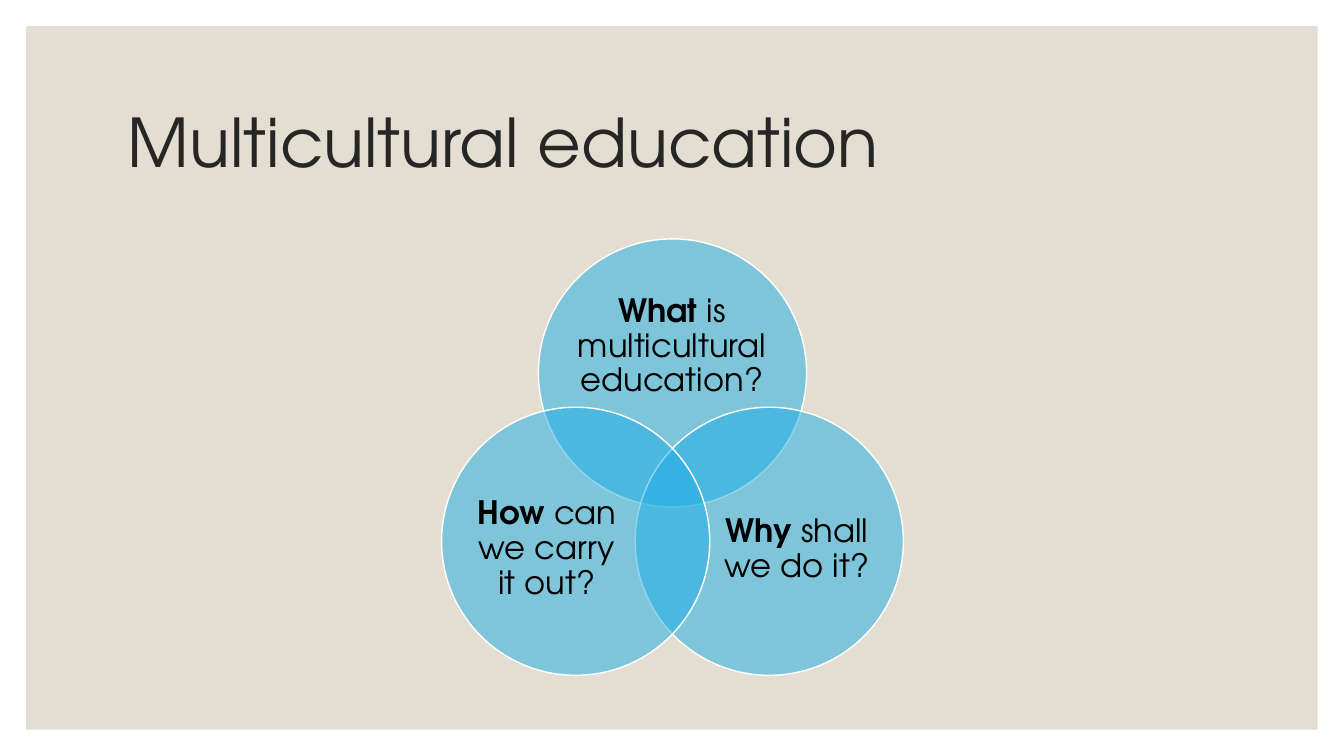
"""Build the multicultural education slide with its three-circle Venn diagram."""
from lxml import etree
from pptx import Presentation, util as u
from pptx.dml.color import RGBColor
from pptx.enum import shapes, text
from pptx.oxml import ns

HEADING = "Multicultural education"
QUESTIONS = [
    {"lead": "What ", "rest": "is multicultural education?",
     "circle": (5.34, 2.37), "label": (5.69, 2.84, 1.95, 1.2)},
    {"lead": "Why ", "rest": "shall we do it?",
     "circle": (6.3, 4.04), "label": (7.11, 4.72, 1.59, 1.46)},
    {"lead": "How ", "rest": "can we carry it out?",
     "circle": (4.38, 4.04), "label": (4.63, 4.72, 1.59, 1.46)},
]

WIDTH, HEIGHT, MARGIN = 13.33, 7.5, 0.26
DIAMETER = 2.66
FONT = "TeX Gyre Adventor"
SAND = RGBColor(0xE3, 0xDE, 0xD1)
BLUE = RGBColor(0x1C, 0xAD, 0xE4)
WHITE = RGBColor(0xFF, 0xFF, 0xFF)
BLACK = RGBColor(0, 0, 0)
CHARCOAL = RGBColor(0x26, 0x26, 0x26)

HEADING_FONT = {"name": FONT, "size": u.Pt(48), "bold": False}
LABEL_FONT = {"name": FONT, "size": u.Pt(23)}
FRAME = {"word_wrap": True, "vertical_anchor": text.MSO_ANCHOR.MIDDLE}
NO_INSETS = dict.fromkeys(
    ("margin_left", "margin_top", "margin_right", "margin_bottom"), 0)


def apply(target, values):
    for name, value in values.items():
        setattr(target, name, value)


def add_solid(slide, kind, box, colour):
    solid = slide.shapes.add_shape(kind, *map(u.Inches, box))
    solid.shadow.inherit = False
    solid.fill.solid()
    solid.fill.fore_color.rgb = colour
    return solid


def add_words(slide, box, runs, colour, frame_format, align):
    frame = slide.shapes.add_textbox(*map(u.Inches, box)).text_frame
    apply(frame, frame_format)
    line = frame.paragraphs[0]
    apply(line, {"alignment": align, "line_spacing": 0.9})
    for words, font_format in runs:
        run = line.add_run()
        run.text = words
        apply(run.font, font_format)
        run.font.color.rgb = colour


def add_circle(slide, corner):
    circle = add_solid(slide, shapes.MSO_SHAPE.OVAL,
                       (*corner, DIAMETER, DIAMETER), BLUE)
    tint = circle.fill._xPr.find(ns.qn("a:solidFill"))[0]
    etree.SubElement(tint, ns.qn("a:alpha"), val="50000")
    circle.line.color.rgb = WHITE
    circle.line.width = u.Pt(1)


def main():
    deck = Presentation()
    apply(deck, {"slide_width": u.Inches(WIDTH), "slide_height": u.Inches(HEIGHT)})
    slide = deck.slides.add_slide(deck.slide_layouts[6])
    panel = add_solid(slide, shapes.MSO_SHAPE.RECTANGLE,
                      (MARGIN, MARGIN, WIDTH - 2 * MARGIN, HEIGHT - 2 * MARGIN), SAND)
    panel.line.fill.background()
    add_words(slide, (1.17, 0.7, 11, 1.5), [(HEADING, HEADING_FONT)],
              CHARCOAL, FRAME, text.PP_ALIGN.LEFT)
    for question in QUESTIONS:
        add_circle(slide, question["circle"])
        runs = [(question["lead"], {**LABEL_FONT, "bold": True}),
                (question["rest"], {**LABEL_FONT, "bold": False})]
        add_words(slide, question["label"], runs, BLACK,
                  {**FRAME, **NO_INSETS}, text.PP_ALIGN.CENTER)
    deck.save("out.pptx")


if __name__ == "__main__":
    main()
